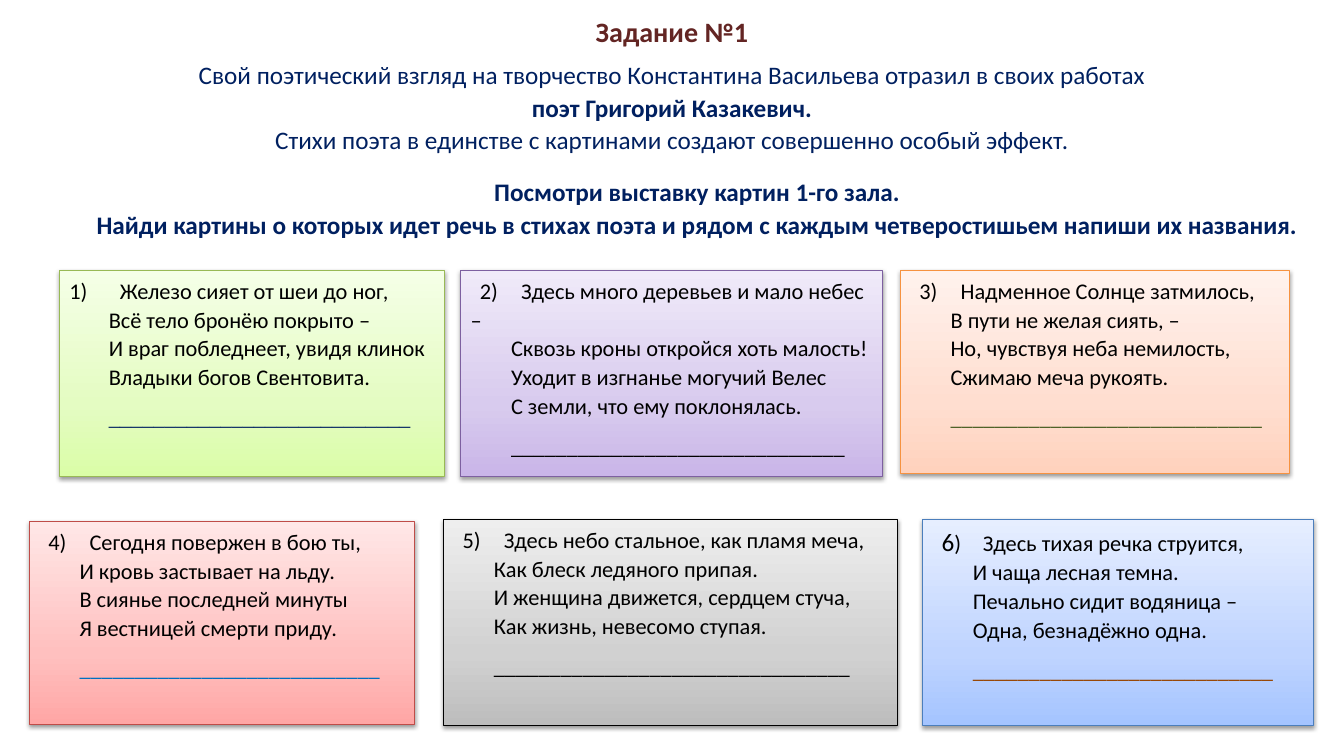
from dataclasses import dataclass

import pptx
import pptx.dml.color
import pptx.enum.shapes
import pptx.enum.text
import pptx.oxml
import pptx.oxml.ns
import pptx.util
from pptx.dml.color import RGBColor
from pptx.util import Inches, Pt

BLACK = RGBColor(0x00, 0x00, 0x00)
NAVY = RGBColor(0x00, 0x20, 0x60)
MAROON = RGBColor(0x63, 0x25, 0x23)
GREEN = RGBColor(0x98, 0xB9, 0x55)
PURPLE = RGBColor(0x7D, 0x60, 0xA0)
ORANGE = RGBColor(0xF6, 0x92, 0x40)
RED = RGBColor(0xBF, 0x4C, 0x48)
BLUE = RGBColor(0x4B, 0x7E, 0xBC)
OLIVE = RGBColor(0x4F, 0x62, 0x28)
SKY = RGBColor(0x00, 0x70, 0xC0)
BROWN = RGBColor(0x98, 0x48, 0x07)
GREEN_FADE = tuple(map(RGBColor.from_string, ("DAFDA7", "E4FCC2", "F5FFE7")))
PURPLE_FADE = tuple(map(RGBColor.from_string, ("C9B5E8", "D8CBEE", "F0EAF9")))
ORANGE_FADE = tuple(map(RGBColor.from_string, ("FFD2BD", "FFDED0", "FFF2ED")))
RED_FADE = tuple(map(RGBColor.from_string, ("FFA6A5", "FFC0BF", "FFE7E7")))
GREY_FADE = tuple(map(RGBColor.from_string, ("BDBDBD", "D1D1D1", "EEEEEE")))
BLUE_FADE = tuple(map(RGBColor.from_string, ("A4C4FF", "BFD4FF", "E6EEFF")))

LINE_SPACING = 1.07
NAMESPACE = pptx.oxml.ns.nsdecls("a")


@dataclass
class IntroLine:
    text: str
    bold: bool = False
    indent: float = 0
    space_before: float = 0


@dataclass
class Verse:
    number: int
    left: float
    top: float
    width: float
    height: float
    fade: tuple[RGBColor, ...]
    border: RGBColor
    lines: tuple[str, ...]
    blank_length: int
    blank_color: RGBColor = BLACK
    blank_font: str = "Calibri"
    number_left: float = 0.09
    number_size: float = 16
    first_left: float = 0.37
    line_left: float = 0.4


INTRO = [
    IntroLine("Свой поэтический взгляд на творчество Константина Васильева отразил в своих работах"),
    IntroLine("поэт Григорий Казакевич.", bold=True),
    IntroLine("Стихи поэта в единстве с картинами создают совершенно особый эффект."),
    IntroLine("Посмотри выставку картин 1-го зала.", bold=True, indent=0.5, space_before=14.4),
    IntroLine("Найди картины о которых идет речь в стихах поэта и рядом с каждым "
              "четверостишьем напиши их названия.", bold=True, indent=0.5),
]

VERSES = [
    Verse(1, 0.59, 2.68, 3.82, 2.05, GREEN_FADE, GREEN,
          ("Железо сияет от шеи до ног,", "Всё тело бронёю покрыто –",
           "И враг побледнеет, увидя клинок", "Владыки богов Свентовита."),
          27, NAVY, "Times New Roman", number_left=0, first_left=0.38, line_left=0.39),
    Verse(2, 4.57, 2.68, 4.18, 2.05, PURPLE_FADE, PURPLE,
          ("Здесь много деревьев и мало небес –", "Сквозь кроны откройся хоть малость!",
           "Уходит в изгнанье могучий Велес", "С земли, что ему поклонялась."), 30),
    Verse(3, 8.93, 2.68, 3.86, 2.02, ORANGE_FADE, ORANGE,
          ("Надменное Солнце затмилось,", "В пути не желая сиять, –",
           "Но, чувствуя неба немилость,", "Сжимаю меча рукоять."), 28, OLIVE),
    Verse(4, 0.29, 5.17, 3.82, 2.02, RED_FADE, RED,
          ("Сегодня повержен в бою ты,", "И кровь застывает на льду.",
           "В сиянье последней минуты", "Я вестницей смерти приду."), 27, SKY),
    Verse(5, 4.4, 5.15, 4.5, 2.05, GREY_FADE, BLACK,
          ("Здесь небо стальное, как пламя меча,", "Как блеск ледяного припая.",
           "И женщина движется, сердцем стуча,", "Как жизнь, невесомо ступая."),
          32, first_left=0.42),
    Verse(6, 9.15, 5.15, 3.88, 2.05, BLUE_FADE, BLUE,
          ("Здесь тихая речка струится,", "И чаща лесная темна.",
           "Печально сидит водяница –", "Одна, безнадёжно одна."),
          27, BROWN, number_size=18),
]


def next_paragraph(frame, index: int):
    return frame.paragraphs[0] if index == 0 else frame.add_paragraph()


def set_font(font, size: float, color: RGBColor, bold: bool = False, name: str = "Calibri") -> None:
    font.name = name
    font.size = Pt(size)
    font.bold = bold
    font.color.rgb = color


def add_text_box(page, top: float, height: float):
    box = page.shapes.add_textbox(Inches(0), Inches(top), Inches(13.33), Inches(height))
    box.text_frame.word_wrap = True
    return box.text_frame


def add_title(page) -> None:
    frame = add_text_box(page, 0.1, 0.42)
    frame.vertical_anchor = pptx.enum.text.MSO_ANCHOR.MIDDLE
    para = frame.paragraphs[0]
    para.text = "Задание №1"
    para.alignment = pptx.enum.text.PP_ALIGN.CENTER
    set_font(para.font, 20, MAROON, bold=True)


def add_intro(page) -> None:
    frame = add_text_box(page, 0.52, 1.92)
    for index, line in enumerate(INTRO):
        para = next_paragraph(frame, index)
        para.text = line.text
        para.alignment = pptx.enum.text.PP_ALIGN.CENTER
        para.line_spacing = LINE_SPACING
        if line.space_before:
            para.space_before = Pt(line.space_before)
        if line.indent:
            para._p.get_or_add_pPr().set("marL", str(Inches(line.indent)))
        set_font(para.font, 18, NAVY, line.bold)


def style_card(card, verse: Verse) -> None:
    """Give the card its border, upward gradient and soft shadow below."""
    card.line.color.rgb = verse.border
    card.line.width = Pt(0.75)
    stops = "".join(f'<a:gs pos="{place * 1000}"><a:srgbClr val="{color}"/></a:gs>'
                    for place, color in zip((0, 35, 100), verse.fade))
    gradient = pptx.oxml.parse_xml(
        f'<a:gradFill {NAMESPACE} rotWithShape="1"><a:gsLst>{stops}</a:gsLst>'
        '<a:lin ang="16200000" scaled="0"/></a:gradFill>')
    shadow = pptx.oxml.parse_xml(
        f'<a:effectLst {NAMESPACE}><a:outerShdw blurRad="{Pt(3.1)}" dist="{Pt(1.6)}" '
        'dir="5400000" rotWithShape="0"><a:srgbClr val="000000"><a:alpha val="38000"/>'
        '</a:srgbClr></a:outerShdw></a:effectLst>')
    properties = card._element.spPr
    properties.find(pptx.oxml.ns.qn("a:prstGeom")).addnext(gradient)
    properties.append(shadow)


def add_verse(page, verse: Verse) -> None:
    card = page.shapes.add_shape(
        pptx.enum.shapes.MSO_SHAPE.RECTANGLE, Inches(verse.left), Inches(verse.top),
        Inches(verse.width), Inches(verse.height))
    style_card(card, verse)
    frame = card.text_frame
    frame.word_wrap = True
    frame.vertical_anchor = pptx.enum.text.MSO_ANCHOR.TOP
    blank = "_" * verse.blank_length
    for index, line in enumerate((*verse.lines, blank)):
        para = next_paragraph(frame, index)
        para.alignment = pptx.enum.text.PP_ALIGN.LEFT
        para.line_spacing = LINE_SPACING
        properties = para._p.get_or_add_pPr()
        if index == 0:
            properties.set("marL", "0")
            properties.set("indent", str(Inches(verse.number_left)))
            properties.append(pptx.oxml.parse_xml(
                f'<a:tabLst {NAMESPACE}><a:tab pos="{Inches(verse.first_left)}" algn="l"/></a:tabLst>'))
            number = para.add_run()
            number.text = str(verse.number)
            if verse.number_size != 16:
                number.font.size = Pt(verse.number_size)
            para.add_run().text = f")\t{line}"
        else:
            properties.set("marL", str(Inches(verse.line_left)))
            para.text = line
        if index >= 3:
            para.space_after = Pt(8)
        if line == blank:
            set_font(para.font, 16, verse.blank_color, name=verse.blank_font)
        else:
            set_font(para.font, 16, BLACK)


def main() -> None:
    deck = pptx.Presentation()
    deck.slide_width = Inches(13.33)
    deck.slide_height = Inches(7.5)
    page = deck.slides.add_slide(deck.slide_layouts[6])
    add_title(page)
    add_intro(page)
    for verse in VERSES:
        add_verse(page, verse)
    deck.save("out.pptx")


if __name__ == "__main__":
    main()
